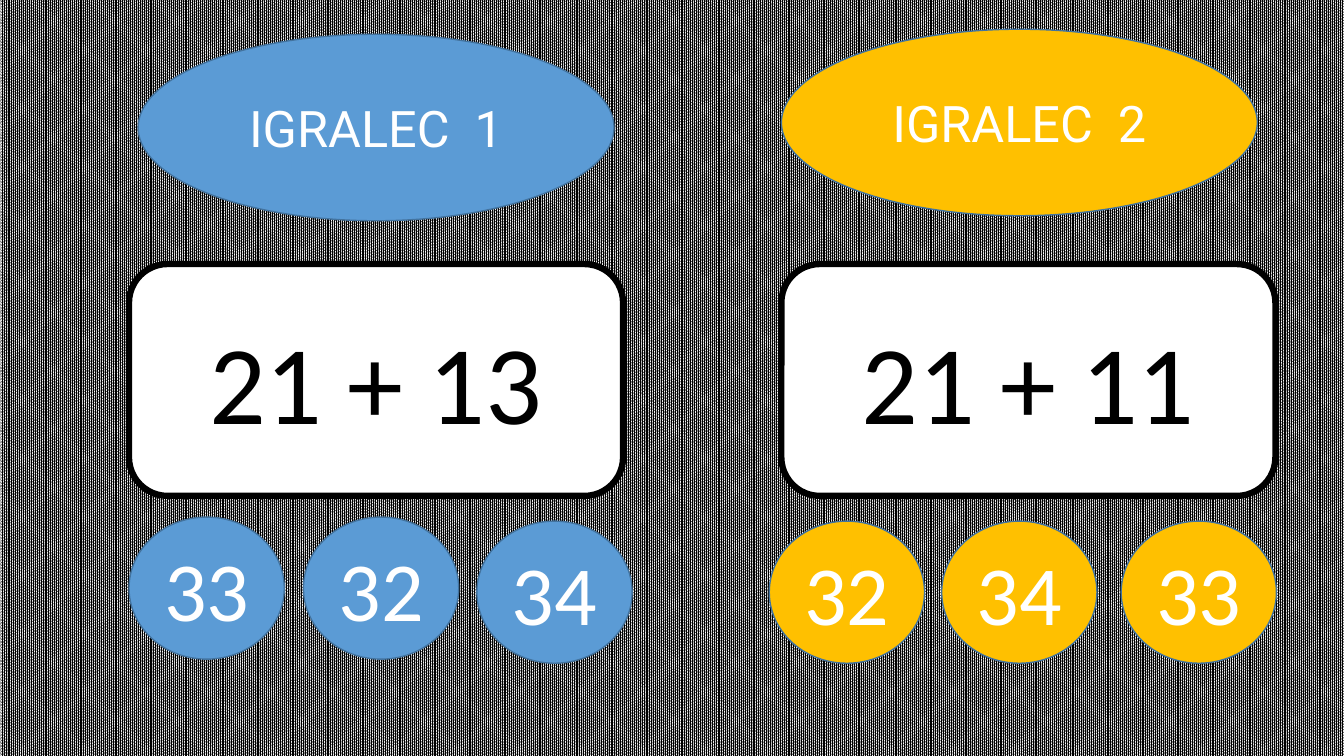
from dataclasses import dataclass

from pptx import Presentation
from pptx.dml.color import RGBColor
from pptx.enum import dml, shapes, text
from pptx.util import Inches, Pt


@dataclass(frozen=True)
class Theme:
    black: str = "000000"
    white: str = "FFFFFF"
    blue: str = "5B9BD5"
    gold: str = "FFC000"
    edge: str = "43739E"
    body: str = "Calibri"
    head: str = "Roboto"
    name_size: int = 36
    sum_size: int = 80
    ball_size: int = 60


class Board:
    def __init__(self, deck, theme):
        self.theme = theme
        self.slide = deck.slides.add_slide(deck.slide_layouts[6])

    def back(self):
        fill = self.slide.background.fill
        fill.patterned()
        fill.pattern = dml.MSO_PATTERN.PERCENT_90
        fill.fore_color.rgb = RGBColor.from_string(self.theme.black)
        fill.back_color.rgb = RGBColor.from_string(self.theme.white)

    def shape(self, kind, box, label, fill, edge, width, ink, font):
        """Add a filled, outlined shape with a centred label."""
        item = self.slide.shapes.add_shape(kind, *map(Inches, box))
        item.shadow.inherit = False
        item.fill.solid()
        item.fill.fore_color.rgb = RGBColor.from_string(fill)
        item.line.color.rgb = RGBColor.from_string(edge)
        item.line.width = Pt(width)
        frame = item.text_frame
        frame.word_wrap = True
        frame.vertical_anchor = text.MSO_ANCHOR.MIDDLE
        para = frame.paragraphs[0]
        para.alignment = text.PP_ALIGN.CENTER
        run = para.add_run()
        run.text = label
        for key, value in font.items():
            setattr(run.font, key, value)
        run.font.color.rgb = RGBColor.from_string(ink)

    def oval(self, box, label, fill, font):
        self.shape(shapes.MSO_SHAPE.OVAL, box, label, fill,
                   self.theme.edge, 1, self.theme.white, font)

    def name(self, left, top, label, fill):
        font = {"name": self.theme.head, "size": Pt(self.theme.name_size)}
        self.oval((left, top, 4.72, 1.85), label, fill, font)

    def ball(self, left, top, label, fill):
        font = {"name": self.theme.body, "size": Pt(self.theme.ball_size)}
        self.oval((left, top, 1.54, 1.41), label, fill, font)

    def card(self, left, label):
        look = self.theme
        font = {"name": look.body, "size": Pt(look.sum_size)}
        self.shape(shapes.MSO_SHAPE.ROUNDED_RECTANGLE, (left, 2.62, 4.9, 2.3),
                   label, look.white, look.black, 4.5, look.black, font)


def main():
    deck = Presentation()
    deck.slide_width, deck.slide_height = Inches(13.33), Inches(7.5)
    theme = Theme()
    board = Board(deck, theme)
    board.back()

    # Each player: colour, name (left, top, label), card (left, sum), answers
    players = [
        (theme.blue, (1.37, 0.34, "IGRALEC  1"), (1.28, "21 + 13"),
         [(1.28, 5.13, "33"), (3.01, 5.13, "32"), (4.73, 5.17, "34")]),
        (theme.gold, (7.75, 0.29, "IGRALEC  2"), (7.75, "21 + 11"),
         [(7.63, 5.17, "32"), (9.34, 5.17, "34"), (11.12, 5.17, "33")]),
    ]
    for fill, name, card, balls in players:
        board.card(*card)
        board.name(*name, fill)
        for ball in balls:
            board.ball(*ball, fill)

    deck.save("out.pptx")


if __name__ == "__main__":
    main()
